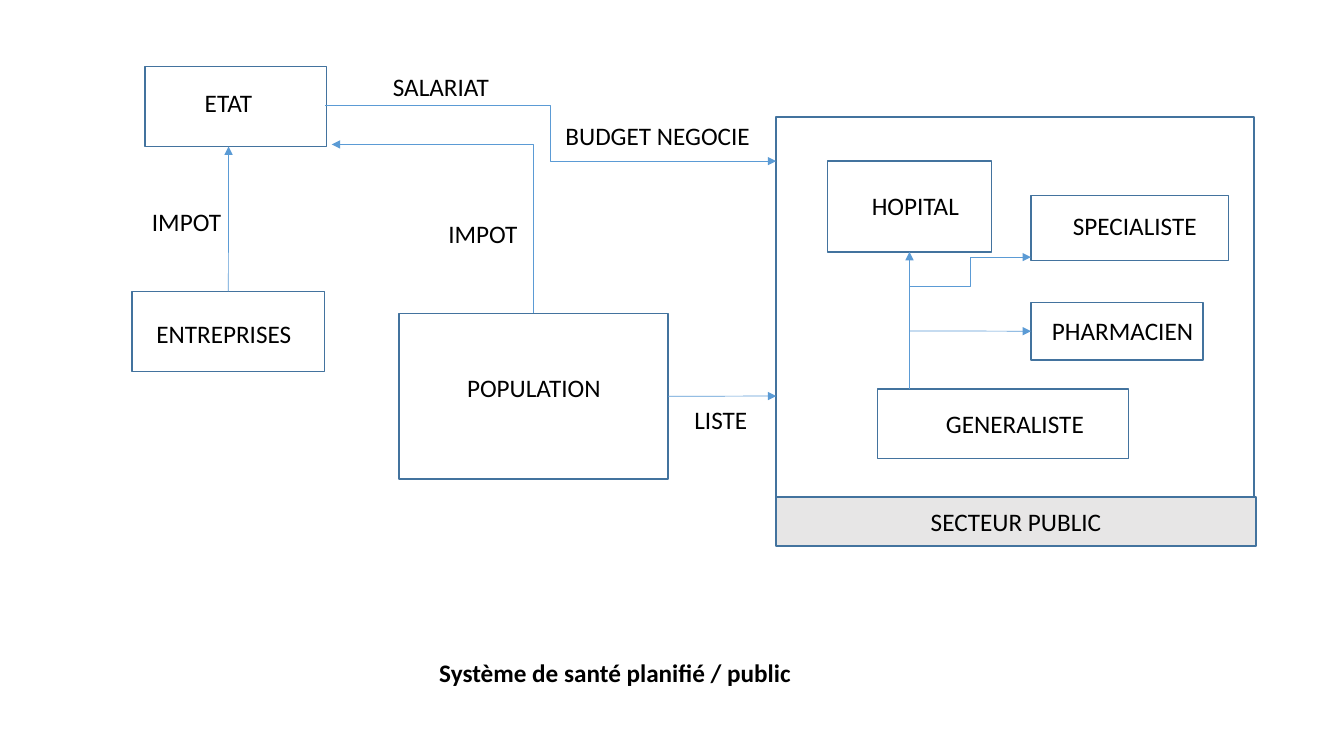
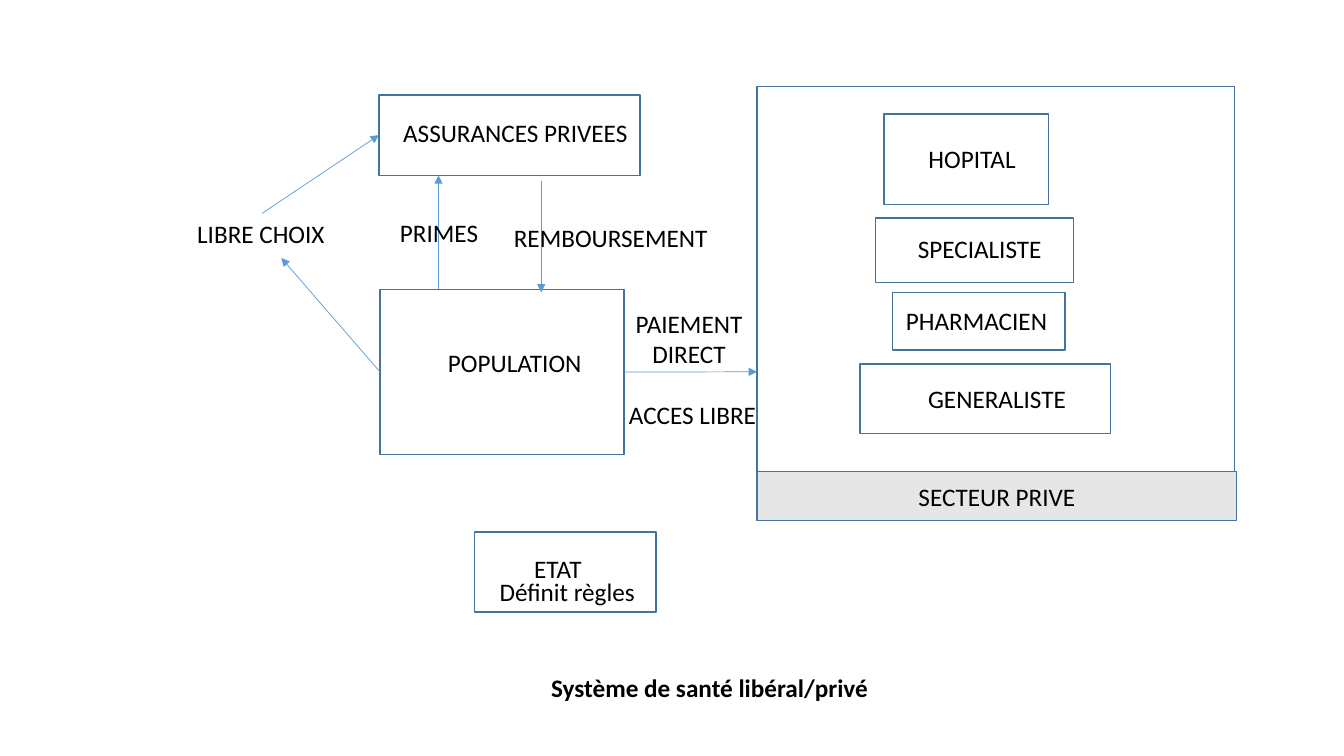
from dataclasses import dataclass, replace
from typing import NamedTuple, Optional

from pptx import Presentation
from pptx.dml.color import RGBColor
from pptx.enum.shapes import MSO_CONNECTOR, MSO_SHAPE
from pptx.enum.text import MSO_ANCHOR, PP_ALIGN
from pptx.oxml.ns import qn
from pptx.util import Cm, Pt
from lxml import etree

RECT = MSO_SHAPE.RECTANGLE
STRAIGHT, ELBOW = MSO_CONNECTOR.STRAIGHT, MSO_CONNECTOR.ELBOW
LEFT, CENTER = PP_ALIGN.LEFT, PP_ALIGN.CENTER
TOP, MIDDLE = MSO_ANCHOR.TOP, MSO_ANCHOR.MIDDLE
SITE_TOP, SITE_LEFT, SITE_BOTTOM, SITE_RIGHT = range(4)

FONT, SIZE = "Calibri", 18
INK, OUTLINE, ARROW, BAND = "000000", "43739E", "5B9BD5", "E7E6E6"
LINE_H = 1.03
SECTOR_W, SECTOR_H = 12.04, 10.77
BAND_W, BAND_H = 12.09, 1.24


@dataclass(frozen=True)
class Box:
    """An outlined actor with its text set in from the top left, in cm."""
    text: str
    w: float
    h: float
    dx: float
    dy: float


@dataclass(frozen=True)
class Label:
    """A free line of text, in cm."""
    text: str
    x: float
    y: float
    w: float
    h: float = LINE_H
    align: PP_ALIGN = LEFT
    bold: bool = False


class Joint(NamedTuple):
    """A connection site on a shape."""
    shape: object
    site: int


@dataclass(frozen=True)
class Link:
    """An arrow between two points, in cm, with optional joints."""
    x1: float
    y1: float
    x2: float
    y2: float
    begin: Optional[Joint] = None
    end: Optional[Joint] = None
    kind: MSO_CONNECTOR = STRAIGHT
    one_bend: bool = False


STATE = Box("ETAT", 4.57, 2.01, 1.5, 0.53)
FIRMS = Box("ENTREPRISES", 4.85, 2.03, 0.61, 0.69)
INSURERS = Box("ASSURANCES PRIVEES", 6.58, 2.03, 0.61, 0.56)
POPULATION = Box("POPULATION", 6.78, 4.17, 1.71, 1.47)
HOSPITAL = Box("HOPITAL", 4.14, 2.29, 1.12, 0.74)
SPECIALIST = Box("SPECIALISTE", 4.98, 1.63, 1.06, 0.38)
PHARMACIST = Box("PHARMACIEN", 4.34, 1.45, 0.53, 0.33)
GENERALIST = Box("GENERALISTE", 6.32, 1.75, 1.72, 0.5)


def rgb(color: str) -> RGBColor:
    """Turn a hex string into a colour."""
    return RGBColor.from_string(color)


def write(tf, text: str, align: PP_ALIGN = LEFT, bold: bool = False) -> None:
    """Fill a text frame in the common style."""
    tf.text = text
    for p in tf.paragraphs:
        p.alignment = align
        p.font.name, p.font.size, p.font.bold = FONT, Pt(SIZE), bold
        p.font.color.rgb = rgb(INK)


def add_rect(s, x: float, y: float, w: float, h: float, fill: str = ""):
    """Add an outlined rectangle, empty unless a fill is given."""
    sp = s.shapes.add_shape(RECT, Cm(x), Cm(y), Cm(w), Cm(h))
    sp.shadow.inherit = False
    sp.line.color.rgb, sp.line.width = rgb(OUTLINE), Pt(1)
    if fill:
        sp.fill.solid()
        sp.fill.fore_color.rgb = rgb(fill)
    else:
        sp.fill.background()
    return sp


def add_box(s, box: Box, x: float, y: float):
    """Place an actor on the slide."""
    sp = add_rect(s, x, y, box.w, box.h)
    tf = sp.text_frame
    tf.word_wrap, tf.vertical_anchor = True, TOP
    tf.margin_left, tf.margin_top = Cm(box.dx), Cm(box.dy)
    tf.margin_right = tf.margin_bottom = 0
    write(tf, box.text)
    return sp


def add_sector(s, text: str, x: float, y: float, band_dy: float):
    """Add the care sector frame with its named band."""
    frame = add_rect(s, x, y, SECTOR_W, SECTOR_H)
    band = add_rect(s, x, y + band_dy, BAND_W, BAND_H, BAND)
    band.text_frame.vertical_anchor = MIDDLE
    write(band.text_frame, text, CENTER)
    return frame


def add_label(s, label: Label) -> None:
    """Add a free text."""
    sp = s.shapes.add_textbox(Cm(label.x), Cm(label.y), Cm(label.w), Cm(label.h))
    sp.text_frame.word_wrap = False
    write(sp.text_frame, label.text, label.align, label.bold)


def add_link(s, link: Link) -> None:
    """Add an arrow; a one-bend arrow leaves its start vertically."""
    points = [(link.x1, link.y1), (link.x2, link.y2)]
    if link.one_bend:
        points.reverse()
    c = s.shapes.add_connector(link.kind, *(Cm(v) for point in points for v in point))
    c.line.color.rgb, c.line.width = rgb(ARROW), Pt(0.5)
    if link.begin:
        c.begin_connect(*link.begin)
    if link.end:
        c.end_connect(*link.end)
    sp_pr = c._element.spPr
    if link.one_bend:
        sp_pr.find(qn("a:prstGeom")).set("prst", "bentConnector2")
    tip = "a:headEnd" if link.one_bend else "a:tailEnd"
    etree.SubElement(sp_pr.find(qn("a:ln")), qn(tip), type="triangle")
    etree.SubElement(sp_pr, qn("a:effectLst"))


def add_details(s, links: list[Link], labels: list[Label]) -> None:
    """Add the arrows and texts of a diagram."""
    for link in links:
        add_link(s, link)
    for label in labels:
        add_label(s, label)


def build_public(s) -> None:
    """Draw the planned, public health system."""
    add_box(s, STATE, 3.66, 1.68)
    firms = add_box(s, FIRMS, 3.33, 7.34)
    population = add_box(s, POPULATION, 10.06, 7.9)
    add_sector(s, "SECTEUR PUBLIC", 19.56, 2.95, 9.57)
    hospital = add_box(s, HOSPITAL, 20.85, 4.06)
    add_box(s, SPECIALIST, 25.98, 4.93)
    pharmacist = add_box(s, PHARMACIST, 25.98, 7.62)
    add_box(s, GENERALIST, 22.12, 9.8)
    add_details(s, [
        Link(8.2, 2.65, 19.56, 4.06, kind=ELBOW),
        Link(5.76, 7.34, 5.76, 3.69, begin=Joint(firms, SITE_TOP)),
        Link(13.44, 7.9, 8.36, 3.64, kind=ELBOW, one_bend=True),
        Link(22.92, 9.8, 22.92, 6.35, end=Joint(hospital, SITE_BOTTOM)),
        Link(22.92, 8.34, 25.98, 8.34, end=Joint(pharmacist, SITE_LEFT)),
        Link(22.92, 7.22, 25.98, 6.48, kind=ELBOW),
        Link(16.84, 9.98, 19.56, 9.98, begin=Joint(population, SITE_RIGHT)),
    ], [
        Label("IMPOT", 3.58, 5.08, 2.26),
        Label("IMPOT", 11.05, 5.38, 2.26),
        Label("SALARIAT", 9.65, 1.68, 2.95),
        Label("BUDGET NEGOCIE", 14, 2.9, 5.21),
        Label("LISTE", 17.25, 10.06, 1.85),
        Label("Système de santé planifié / public", 10.82, 16.43, 9.45, bold=True),
    ])


def build_private(s) -> None:
    """Draw the liberal, private health system."""
    add_box(s, STATE, 11.96, 13.41)
    insurers = add_box(s, INSURERS, 9.55, 2.39)
    population = add_box(s, replace(POPULATION, w=6.15), 9.58, 7.29)
    add_sector(s, "SECTEUR PRIVE", 19.08, 2.18, 9.7)
    add_box(s, HOSPITAL, 22.28, 2.87)
    add_box(s, SPECIALIST, 22.07, 5.49)
    add_box(s, replace(PHARMACIST, dx=0.33), 22.5, 7.37)
    add_box(s, GENERALIST, 21.67, 9.17)
    add_details(s, [
        Link(15.73, 9.37, 19.08, 9.37, begin=Joint(population, SITE_RIGHT)),
        Link(11.05, 7.29, 11.05, 4.42),
        Link(13.64, 4.55, 13.64, 7.37),
        Link(9.58, 9.37, 7.09, 6.5, begin=Joint(population, SITE_LEFT)),
        Link(6.6, 5.38, 9.55, 3.4, end=Joint(insurers, SITE_LEFT)),
    ], [
        Label("LIBRE CHOIX", 4.72, 5.38, 3.76),
        Label("PRIMES", 9.83, 5.36, 2.49),
        Label("REMBOURSEMENT", 12.7, 5.49, 5.44),
        Label("PAIEMENT\nDIRECT", 15.75, 7.65, 3.23, 1.8, CENTER),
        Label("ACCES LIBRE", 15.6, 9.93, 3.76),
        Label("Définit règles", 12.34, 14.4, 3.96),
        Label("Système de santé libéral/privé", 13.64, 16.81, 8.56, bold=True),
    ])


def main() -> None:
    """Build and save the presentation."""
    prs = Presentation()
    prs.slide_width, prs.slide_height = Cm(33.87), Cm(19.05)
    for build in (build_public, build_private):
        build(prs.slides.add_slide(prs.slide_layouts[6]))
    prs.save("out.pptx")


if __name__ == "__main__":
    main()
